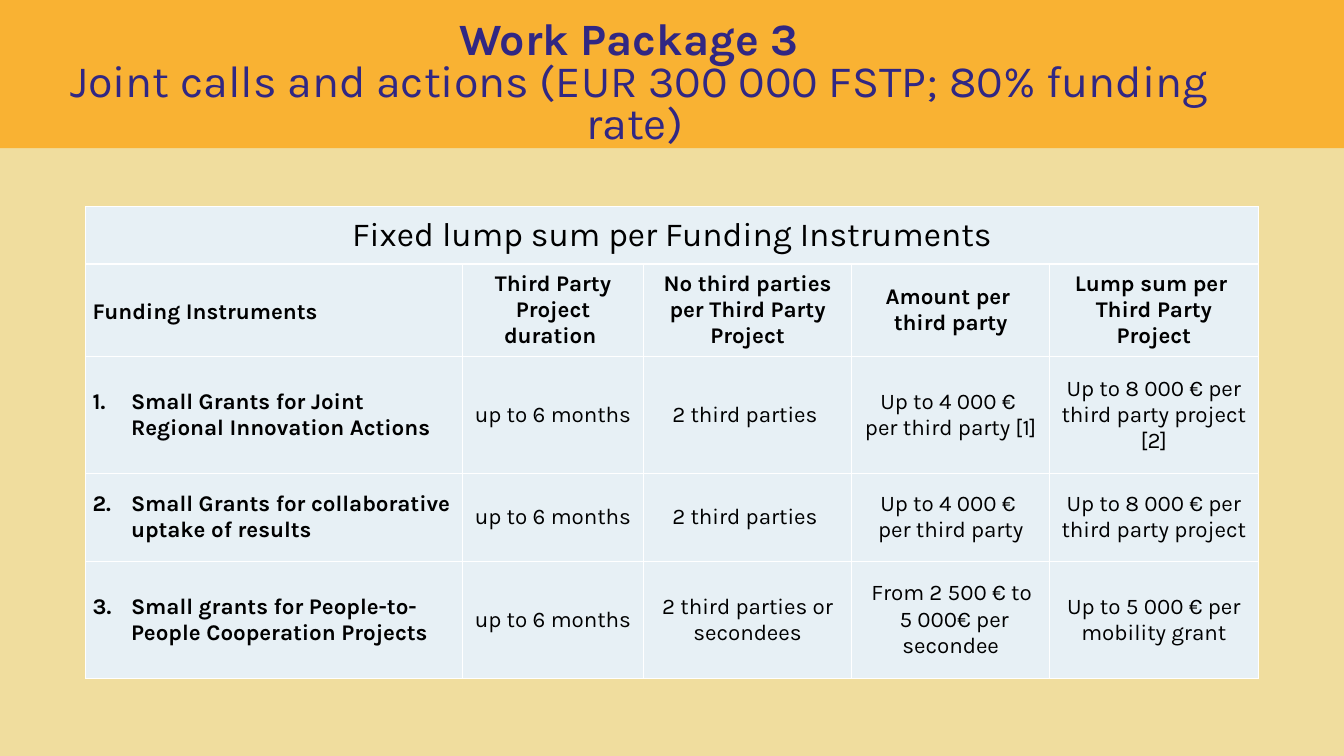
from lxml import etree
from pptx import Presentation
from pptx import util as u
from pptx.dml.color import RGBColor
from pptx.enum import shapes, text
from pptx.oxml.ns import qn

SAND = RGBColor(0xF0, 0xDD, 0x9E)
GOLD = RGBColor(0xF9, 0xB2, 0x33)
NAVY = RGBColor(0x31, 0x27, 0x83)
PALE = RGBColor(0xE7, 0xF0, 0xF5)
BLACK = RGBColor(0, 0, 0)
WHITE = RGBColor(255, 255, 255)
MID = text.PP_ALIGN.CENTER
LEFT = text.PP_ALIGN.LEFT

COLS = [3.74, 1.79, 2.07, 1.96, 2.07]
ROWS = [0.57, 0.87, 1.16, 0.87, 1.16]
HEADS = ["Funding Instruments", "Third Party Project duration ",
         "Nº third parties per Third Party Project",
         "Amount per \nthird party", "Lump sum per \nThird Party Project"]
GRANTS = [
    ["Small Grants for Joint Regional Innovation Actions", "up to 6 months",
     "2 third parties ", "Up to 4 000 € \nper third party [1]",
     "Up to 8 000 € per third party project [2]"],
    ["Small Grants for collaborative uptake of results", "up to 6 months",
     "2 third parties ", "Up to 4 000 € \nper third party",
     "Up to 8 000 € per third party project"],
    ["Small grants for People-to-People Cooperation Projects", "up to 6 months",
     "2 third parties or secondees", "From 2 500 € to \n5 000€ per secondee",
     "Up to 5 000 € per mobility grant"],
]


def put(obj, **vals):
    for key, val in vals.items():
        setattr(obj, key, val)


class Deck:
    face = "Karla"

    def __init__(self):
        self.prs = Presentation()
        put(self.prs, slide_width=u.Inches(13.33), slide_height=u.Inches(7.5))
        self.slide = self.prs.slides.add_slide(self.prs.slide_layouts[5])
        fill = self.slide.background.fill
        fill.solid()
        fill.fore_color.rgb = SAND

    def font(self, font, size, color, bold=False):
        put(font, name=self.face, size=u.Pt(size), bold=bold)
        font.color.rgb = color

    def band(self, x, y, w, h, color):
        box = self.slide.shapes.add_shape(
            shapes.MSO_SHAPE.RECTANGLE, *map(u.Inches, (x, y, w, h)))
        box.shadow.inherit = False
        box.fill.solid()
        box.fill.fore_color.rgb = color
        box.line.fill.background()
        # Send behind the title
        self.slide.shapes._spTree.insert(2, box._element)

    def title(self, x, y, w, h, lines):
        box = self.slide.shapes.title
        put(box, left=u.Inches(x), top=u.Inches(y),
            width=u.Inches(w), height=u.Inches(h))
        frame = box.text_frame
        frame.text = "\n".join(lines)
        put(frame, word_wrap=True, auto_size=text.MSO_AUTO_SIZE.NONE,
            vertical_anchor=text.MSO_ANCHOR.TOP)
        for n, para in enumerate(frame.paragraphs):
            put(para, alignment=MID, line_spacing=u.Pt(30), space_before=u.Pt(0))
            self.font(para.runs[0].font, 32, NAVY, n == 0)

    def table(self, x, y, cols, rows):
        grid = self.slide.shapes.add_table(
            len(rows), len(cols),
            *map(u.Inches, (x, y, sum(cols), sum(rows)))).table
        put(grid, first_row=False, horz_banding=False)
        for col, wide in zip(grid.columns, cols):
            col.width = u.Inches(wide)
        for row, high in zip(grid.rows, rows):
            row.height = u.Inches(high)
        for cell in grid.iter_cells():
            self.paint(cell)
        return grid

    def paint(self, cell):
        pad = u.Inches(0.07)
        put(cell, margin_left=pad, margin_right=pad, margin_top=pad,
            margin_bottom=pad, vertical_anchor=text.MSO_ANCHOR.MIDDLE)
        cell.fill.solid()
        cell.fill.fore_color.rgb = PALE
        props = cell._tc.get_or_add_tcPr()
        for n, side in enumerate("LRTB"):
            line = etree.Element(qn("a:ln" + side), w=str(u.Pt(1)))
            fill = etree.SubElement(line, qn("a:solidFill"))
            etree.SubElement(fill, qn("a:srgbClr"), val=str(WHITE))
            props.insert(n, line)

    def label(self, cell, words, size=16, bold=False, align=MID, num=0, indent=0):
        cell.text_frame.text = words
        for para in cell.text_frame.paragraphs:
            para.alignment = align
            props = para._p.get_or_add_pPr()
            if num:
                props.set("marL", str(u.Inches(0.38)))
                props.set("indent", str(u.Inches(-0.38)))
                etree.SubElement(props, qn("a:buFont"), typeface="+mj-lt")
                etree.SubElement(props, qn("a:buAutoNum"),
                                 type="arabicPeriod", startAt=str(num))
            elif indent:
                props.set("indent", str(u.Inches(indent)))
            self.font(para.runs[0].font, size, BLACK, bold)


def main():
    deck = Deck()

    # Title on its band
    deck.band(0, 0, 13.33, 1.47, GOLD)
    deck.title(0.11, 0.17, 12.37, 1.04, [
        "Work Package 3 ",
        " Joint calls and actions (EUR 300 000 FSTP; 80% funding rate)"])

    # Table caption and column heads
    grid = deck.table(0.85, 2.05, COLS, ROWS)
    grid.cell(0, 0).merge(grid.cell(0, len(COLS) - 1))
    deck.label(grid.cell(0, 0), "Fixed lump sum per Funding Instruments", 24)
    for c, head in enumerate(HEADS):
        deck.label(grid.cell(1, c), head, bold=True, align=MID if c else LEFT)
    grid.cell(1, 0).text_frame.paragraphs[0].line_spacing = 1.15

    # Numbered grants
    for num, (name, *facts) in enumerate(GRANTS, 1):
        deck.label(grid.cell(num + 1, 0), name, bold=True, align=LEFT, num=num)
        for c, fact in enumerate(facts, 1):
            indent = 0.07 if fact.startswith("From") else 0
            deck.label(grid.cell(num + 1, c), fact, indent=indent)

    deck.prs.save("out.pptx")


if __name__ == "__main__":
    main()
